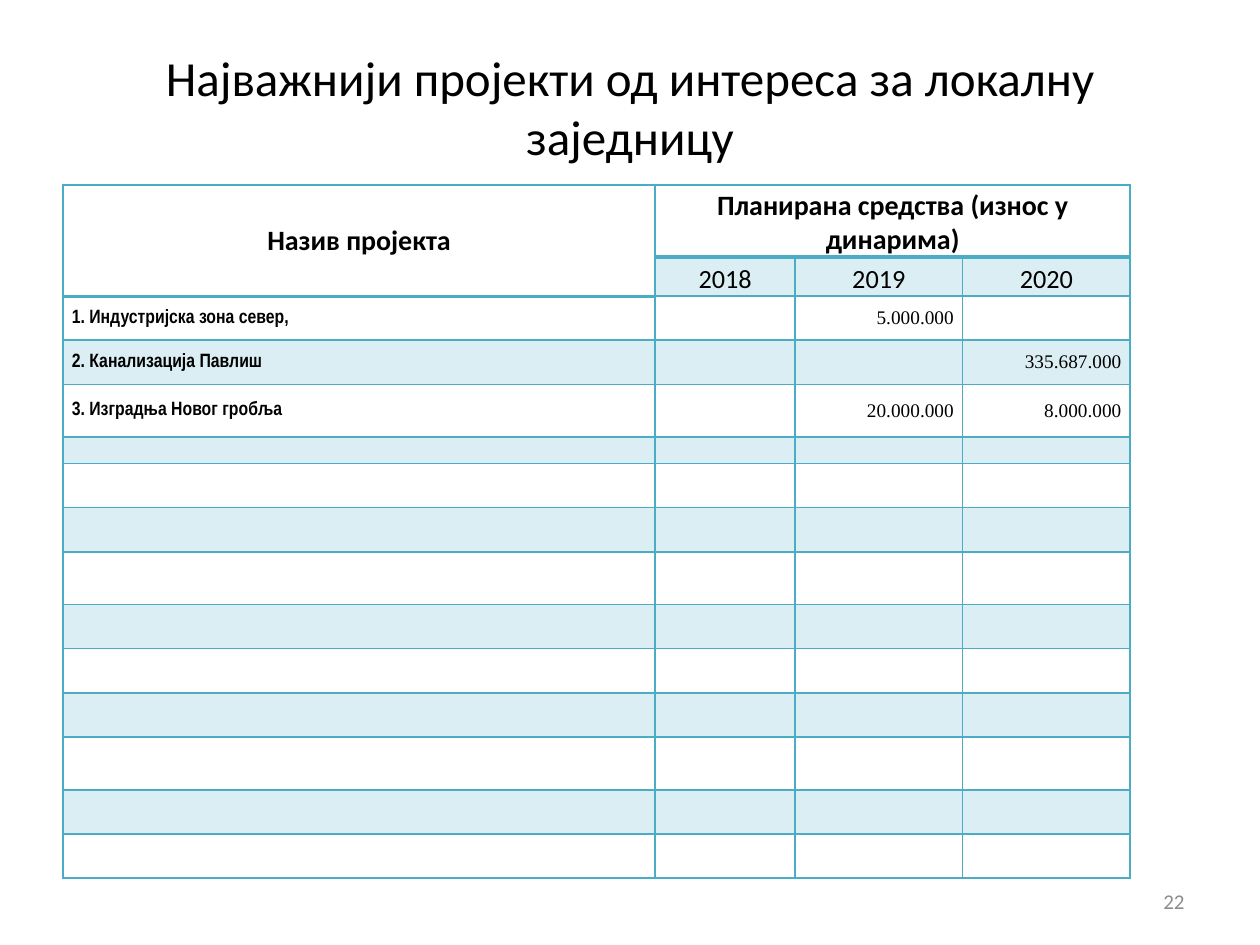
"""Build the slide listing planned funds for local projects."""
from dataclasses import dataclass

from lxml.etree import SubElement
from pptx import Presentation
from pptx.dml.color import RGBColor
from pptx.enum.text import MSO_ANCHOR as Anchor, PP_ALIGN as Align
from pptx.oxml.ns import qn
from pptx.util import Inches, Pt

BLACK = RGBColor(0x00, 0x00, 0x00)
GRAY = RGBColor(0x8C, 0x8C, 0x8C)
TEAL = RGBColor(0x4B, 0xAC, 0xC6)

WIDTH, HEIGHT = Inches(10), Inches(7.5)
COLUMNS = (4.7, 1.11, 1.33, 1.33)
SHORT, TALL = 0.35, 0.42
ROWS = (0.57, 0.31, SHORT, SHORT, TALL, 0.21, *(SHORT, SHORT, TALL, SHORT) * 2, SHORT)
MARGINS = {"margin_left": Inches(0.07), "margin_right": Inches(0.07),
           "margin_top": 0, "margin_bottom": 0}


@dataclass(frozen=True)
class Style:
    """Describe the look of a piece of text."""
    size: float
    name: str = "Calibri"
    bold: bool = False
    color: RGBColor = BLACK
    align: Align = Align.CENTER
    anchor: Anchor = Anchor.MIDDLE


@dataclass(frozen=True)
class Label:
    """Place text in a box given as shares of the slide."""
    text: str
    left: float
    top: float
    width: float
    height: float
    style: Style


@dataclass(frozen=True)
class Entry:
    """Place text in a table cell."""
    row: int
    column: int
    text: str
    style: Style


HEADING = Style(16, bold=True)
GROUP = Style(16, bold=True, anchor=Anchor.BOTTOM)
YEAR = Style(15, anchor=Anchor.BOTTOM)
PROJECT = Style(11, "Arial Narrow", True, align=Align.LEFT)
AMOUNT = Style(11, "Times New Roman", align=Align.RIGHT)

LABELS = (
    Label("Најважнији пројекти од интереса за локалну заједницу",
          0.05, 0.04, 0.9, 0.145, Style(28)),
    Label("22", 0.717, 0.927, 0.233, 0.053, Style(12, color=GRAY, align=Align.RIGHT)),
)
ENTRIES = (
    Entry(0, 0, "Назив пројекта", HEADING),
    Entry(0, 1, "Планирана средства (износ у динарима)", GROUP),
    *(Entry(1, column, str(2017 + column), YEAR) for column in (1, 2, 3)),
    Entry(2, 0, "1. Индустријска зона север,", PROJECT),
    Entry(2, 2, "5.000.000", AMOUNT),
    Entry(3, 0, "2. Канализација Павлиш", PROJECT),
    Entry(3, 3, "335.687.000", AMOUNT),
    Entry(4, 0, "3. Изградња Новог гробља", PROJECT),
    Entry(4, 2, "20.000.000", AMOUNT),
    Entry(4, 3, "8.000.000", AMOUNT),
)


def assign(target, values: dict) -> None:
    """Set every attribute named in the values."""
    for name, value in values.items():
        setattr(target, name, value)


def write(frame, text: str, style: Style) -> None:
    """Write one styled paragraph into a text frame."""
    para = frame.paragraphs[0]
    para.alignment = style.align
    span = para.add_run()
    span.text = text
    assign(span.font, {"size": Pt(style.size), "name": style.name, "bold": style.bold})
    span.font.color.rgb = style.color


def add_label(page, label: Label) -> None:
    """Add a text box to the page."""
    box = page.shapes.add_textbox(
        round(label.left * WIDTH), round(label.top * HEIGHT),
        round(label.width * WIDTH), round(label.height * HEIGHT))
    assign(box.text_frame, {"word_wrap": True, "vertical_anchor": label.style.anchor})
    write(box.text_frame, label.text, label.style)


def edge_weight(edge: int, column: int) -> int:
    """Give the weight of a horizontal rule, heavier under the headings."""
    return 2 if edge == (2 if column == 0 else 1) else 1


def format_cell(cell, row: int, column: int) -> None:
    """Give a cell its margins, borders, fill and empty-line size."""
    assign(cell, MARGINS)
    properties = cell._tc.get_or_add_tcPr()
    weights = {"lnL": 1, "lnR": 1, "lnT": edge_weight(row, column),
               "lnB": edge_weight(row + 1, column)}
    for side, weight in weights.items():
        line = SubElement(properties, qn(f"a:{side}"), w=str(Pt(weight)))
        fill = SubElement(line, qn("a:solidFill"))
        SubElement(fill, qn("a:srgbClr"), val=str(TEAL))
    if row % 2 and (row, column) != (1, 0):
        cell.fill.solid()
        cell.fill.fore_color.rgb = TEAL
        tint = properties.find(f"{qn('a:solidFill')}/{qn('a:srgbClr')}")
        SubElement(tint, qn("a:alpha"), val="20000")
    else:
        cell.fill.background()
    SubElement(cell.text_frame.paragraphs[0]._p, qn("a:endParaRPr"), sz="1100")


def add_project_table(page) -> None:
    """Add the table of projects and yearly amounts."""
    table = page.shapes.add_table(
        len(ROWS), len(COLUMNS), Inches(0.5), Inches(1.47),
        Inches(sum(COLUMNS)), Inches(sum(ROWS))).table
    assign(table, {"first_row": False, "horz_banding": False})
    for column, width in zip(table.columns, COLUMNS):
        column.width = Inches(width)
    for row, height in enumerate(ROWS):
        table.rows[row].height = Inches(height)
        for column in range(len(COLUMNS)):
            format_cell(table.cell(row, column), row, column)
    table.cell(0, 0).merge(table.cell(1, 0))
    table.cell(0, 1).merge(table.cell(0, 3))
    for entry in ENTRIES:
        cell = table.cell(entry.row, entry.column)
        cell.vertical_anchor = entry.style.anchor
        write(cell.text_frame, entry.text, entry.style)


def main() -> None:
    """Build and save the deck."""
    deck = Presentation()
    assign(deck, {"slide_width": WIDTH, "slide_height": HEIGHT})
    page = deck.slides.add_slide(deck.slide_layouts[6])
    for label in LABELS:
        add_label(page, label)
    add_project_table(page)
    deck.save("out.pptx")


if __name__ == "__main__":
    main()
